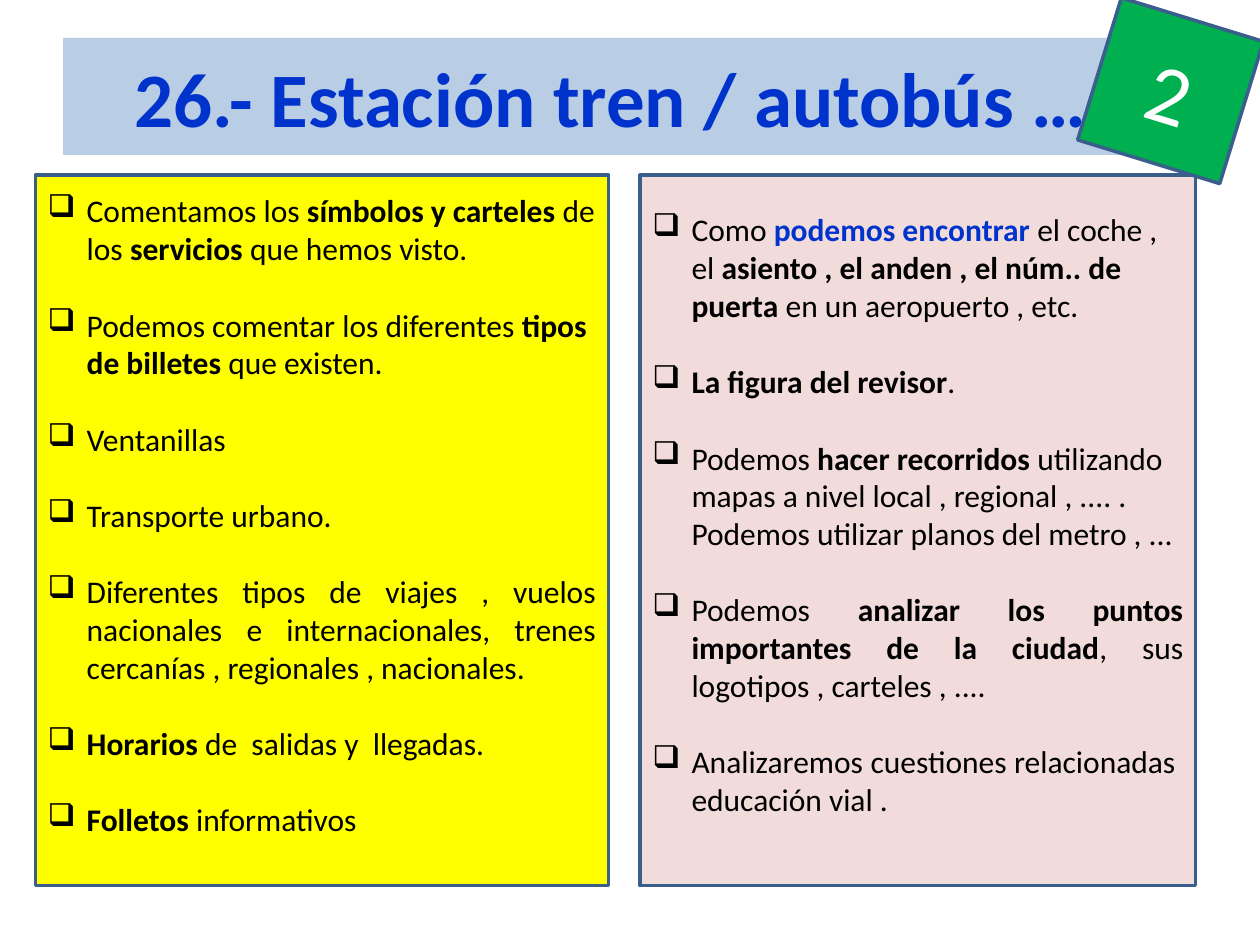
import pptx
import pptx.util
import pptx.oxml
import pptx.oxml.ns
from lxml import etree
from pptx.dml.color import RGBColor
from pptx.enum.shapes import MSO_SHAPE
from pptx.enum.text import MSO_ANCHOR, PP_ALIGN
from pptx.util import Inches, Pt

BLUE = RGBColor(0x00, 0x33, 0xCC)
PALE_BLUE = RGBColor(0xB9, 0xCD, 0xE5)
BORDER = RGBColor(0x3A, 0x5F, 0x8C)
YELLOW = RGBColor(0xFF, 0xFF, 0x00)
PINK = RGBColor(0xF2, 0xDC, 0xDB)
GREEN = RGBColor(0x00, 0xB0, 0x50)
BLACK = RGBColor(0x00, 0x00, 0x00)
WHITE = RGBColor(0xFF, 0xFF, 0xFF)

# Content: each item is (alignment, runs); a run is (text, format)
L, J = PP_ALIGN.LEFT, PP_ALIGN.JUSTIFY
BOLD = {"bold": True}
KEY = {"bold": True, "color": BLUE}
TITLE = "26.- Estación tren / autobús …. "
NUMBER = "2"
TRIP_ITEMS = [
    (L, [("Comentamos los ", {}), ("símbolos y carteles ", BOLD), ("de los ", {}),
         ("servicios ", BOLD), ("que hemos visto.", {})]),
    (L, [("Podemos comentar los diferentes ", {}), ("tipos de billetes ", BOLD),
         ("que existen.", {})]),
    (L, [("Ventanillas", {})]),
    (L, [("Transporte urbano.", {})]),
    (J, [("Diferentes tipos de viajes , vuelos nacionales e internacionales, "
          "trenes cercanías , regionales , nacionales.", {})]),
    (L, [("Horarios ", BOLD), ("de  salidas y  llegadas.", {})]),
    (L, [("Folletos", BOLD), (" informativos", {})]),
]
ROUTE_ITEMS = [
    (L, [("Como ", {}), ("podemos encontrar ", KEY), ("el coche , el ", {}),
         ("asiento , el anden , el núm.. de puerta", BOLD),
         (" en un aeropuerto , etc.", {})]),
    (L, [("La figura del revisor", BOLD), (".", {})]),
    (L, [("Podemos ", {}), ("hacer recorridos ", BOLD),
         ("utilizando mapas a nivel local , regional , .... . "
          "Podemos utilizar planos del metro , ...", {})]),
    (J, [("Podemos ", {}), ("analizar los puntos importantes de la ciudad", BOLD),
         (", sus logotipos , carteles , ....", {})]),
    (J, [("Analizaremos cuestiones relacionadas  educación vial .", {})]),
]
# Left, width, fill, space above the text, items
PANELS = [
    (0.28, 4.55, YELLOW, 0.13, TRIP_ITEMS),
    (5.08, 4.41, PINK, 0.28, ROUTE_ITEMS),
]
PANEL_TOP, PANEL_HEIGHT = 1.39, 5.64
INDENT = Inches(0.31)


def add_run(p, text, size=18, color=BLACK, bold=False):
    r = p.add_run()
    r.text = text
    r.font.name = "Calibri"
    r.font.size = Pt(size)
    r.font.bold = bold
    r.font.color.rgb = color


def add_box(s, left, top, width, height, fill):
    sp = s.shapes.add_shape(MSO_SHAPE.RECTANGLE, Inches(left), Inches(top),
                            Inches(width), Inches(height))
    sp.shadow.inherit = False
    sp.fill.solid()
    sp.fill.fore_color.rgb = fill
    sp.line.color.rgb = BORDER
    sp.line.width = Pt(2)
    sp.text_frame.word_wrap = True
    return sp


def add_bullet(p):
    pPr = p._p.get_or_add_pPr()
    pPr.set("marL", str(INDENT))
    pPr.set("indent", str(-INDENT))
    bu = etree.SubElement(pPr, pptx.oxml.ns.qn("a:buChar"))
    bu.set("char", "❑")


prs = pptx.Presentation()
prs.slide_width, prs.slide_height = Inches(10), Inches(7.5)
s = prs.slides.add_slide(prs.slide_layouts[5])

# Title band
title = s.shapes.title
title.left, title.top = Inches(0.5), Inches(0.3)
title.width, title.height = Inches(9), Inches(0.93)
title.fill.solid()
title.fill.fore_color.rgb = PALE_BLUE
title.text_frame.vertical_anchor = MSO_ANCHOR.MIDDLE
p = title.text_frame.paragraphs[0]
p.alignment = PP_ALIGN.CENTER
add_run(p, TITLE, size=44, color=BLUE, bold=True)

# Bulleted panels
for left, width, fill, inset, items in PANELS:
    tf = add_box(s, left, PANEL_TOP, width, PANEL_HEIGHT, fill).text_frame
    tf.vertical_anchor = MSO_ANCHOR.TOP
    tf.margin_top = Inches(inset)
    for i, (align, runs) in enumerate(items):
        p = tf.add_paragraph() if i else tf.paragraphs[0]
        add_bullet(p)
        p.alignment = align
        if i:
            p.space_before = Pt(22)
        for text, fmt in runs:
            add_run(p, text, **fmt)

# Tilted number card
card = add_box(s, 8.7, 0.13, 1.18, 1.18, GREEN)
card.rotation = 17.1
card.text_frame.vertical_anchor = MSO_ANCHOR.MIDDLE
p = card.text_frame.paragraphs[0]
p.alignment = PP_ALIGN.CENTER
add_run(p, NUMBER, size=48, color=WHITE)

prs.save("out.pptx")
